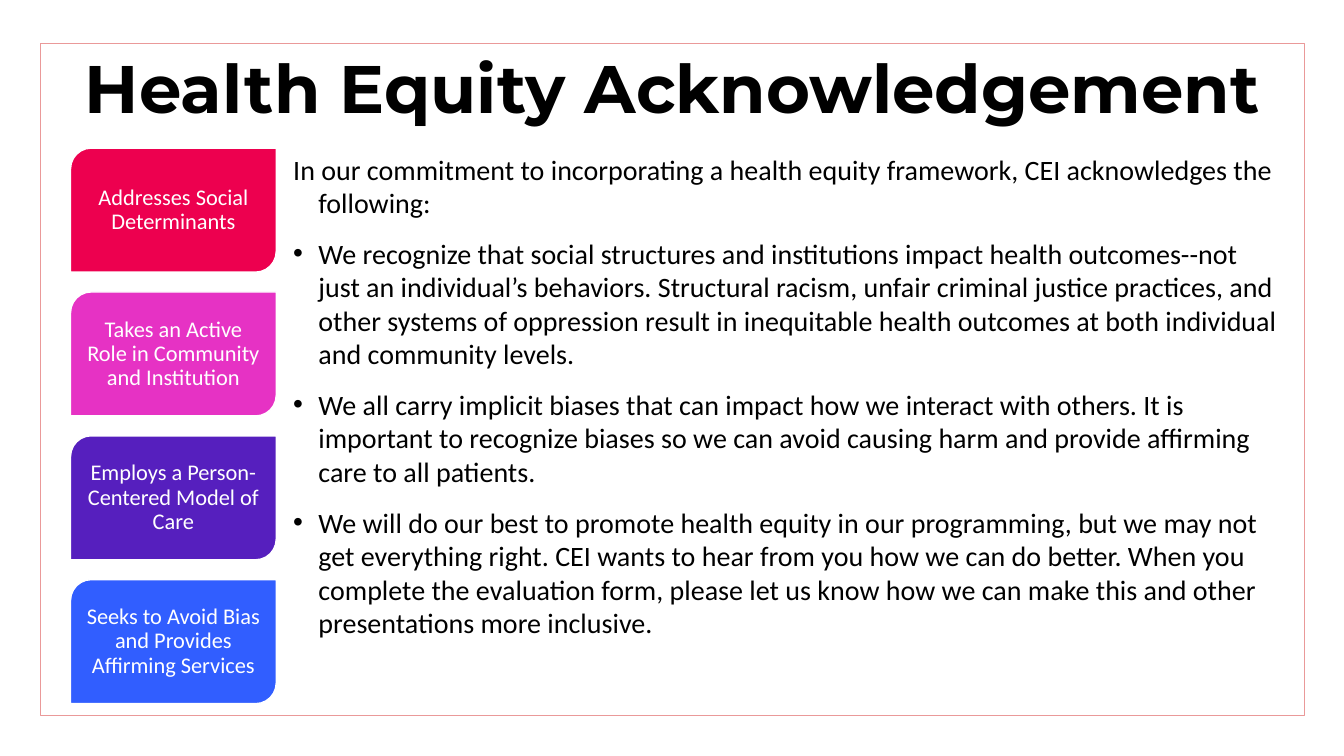
from lxml import etree
from pptx import Presentation
from pptx.dml.color import RGBColor
from pptx.enum import shapes, text
from pptx.oxml.ns import qn
from pptx.util import Inches, Pt

TITLE = "Health Equity Acknowledgement"
INTRO = ("In our commitment to incorporating a health equity framework, "
         "CEI acknowledges the following:")
COMMITMENTS = [
    "We recognize that social structures and institutions impact health outcomes--not just an "
    "individual’s behaviors. Structural racism, unfair criminal justice practices, and other "
    "systems of oppression result in inequitable health outcomes at both individual and "
    "community levels.",
    "We all carry implicit biases that can impact how we interact with others. It is important "
    "to recognize biases so we can avoid causing harm and provide affirming care to all patients.",
    "We will do our best to promote health equity in our programming, but we may not get "
    "everything right. CEI wants to hear from you how we can do better. When you complete the "
    "evaluation form, please let us know how we can make this and other presentations more "
    "inclusive.",
]
PRINCIPLES = [
    ("Addresses Social Determinants", "red"),
    ("Takes an Active Role in Community and Institution", "pink"),
    ("Employs a Person-Centered Model of Care", "purple"),
    ("Seeks to Avoid Bias and Provides Affirming Services", "blue"),
]
COLORS = {
    "frame": "EA9999", "black": "000000", "white": "FFFFFF",
    "red": "ED004F", "pink": "E632C4", "purple": "561FBE", "blue": "315EFF",
}
TITLE_FONT = {"name": "Montserrat", "size": Pt(48), "bold": True}
BODY_FONT = {"name": "Calibri", "size": Pt(20)}
CARD_FONT = {"name": "Calibri", "size": Pt(16)}
CARD_TOP, CARD_PITCH = 1.47, 1.427


def color(name):
    return RGBColor.from_string(COLORS[name])


def set_values(target, values):
    for name, value in values.items():
        setattr(target, name, value)


def set_frame(box, anchor, inset):
    frame = box.text_frame
    set_values(frame, {"word_wrap": True, "auto_size": text.MSO_AUTO_SIZE.NONE,
                       "vertical_anchor": anchor})
    for side in ("left", "right", "top", "bottom"):
        setattr(frame, f"margin_{side}", Inches(inset))
    return frame


def write(para, words, font, font_color, **layout):
    set_values(para, layout)
    span = para.add_run()
    span.text = words
    set_values(span.font, font)
    span.font.color.rgb = color(font_color)


def add_outlined(page, kind, place, line_color, line_width):
    shape = page.shapes.add_shape(kind, *map(Inches, place))
    shape.shadow.inherit = False
    shape.line.color.rgb = color(line_color)
    shape.line.width = Pt(line_width)
    return shape


def set_bullet(para, bulleted):
    """Give a hanging indent, with or without a bullet sign."""
    props = para._p.get_or_add_pPr()
    props.set("marL", str(Inches(0.25)))
    props.set("indent", str(-Inches(0.25)))
    if bulleted:
        etree.SubElement(props, qn("a:buFont")).set("typeface", "Arial")
        etree.SubElement(props, qn("a:buChar")).set("char", "•")
    else:
        etree.SubElement(props, qn("a:buNone"))


def main():
    deck = Presentation()
    deck.slide_width, deck.slide_height = Inches(13.33), Inches(7.5)
    page = deck.slides.add_slide(deck.slide_layouts[5])

    border = add_outlined(page, shapes.MSO_SHAPE.RECTANGLE,
                          (0.4, 0.43, 12.54, 6.67), "frame", 0.75)
    border.fill.background()

    title = page.shapes.title
    set_values(title, {"left": Inches(0.57), "top": Inches(0.42),
                       "width": Inches(12.2), "height": Inches(1.27)})
    frame = set_frame(title, text.MSO_ANCHOR.TOP, 0.13)
    write(frame.paragraphs[0], TITLE, TITLE_FONT, "black",
          alignment=text.PP_ALIGN.CENTER, line_spacing=0.9)

    body = page.shapes.add_textbox(*map(Inches, (2.81, 1.46, 9.99, 4.98)))
    frame = set_frame(body, text.MSO_ANCHOR.TOP, 0.1)
    frame.margin_top = frame.margin_bottom = Inches(0.05)
    for index, words in enumerate([INTRO, *COMMITMENTS]):
        para = frame.add_paragraph() if index else frame.paragraphs[0]
        set_bullet(para, bulleted=index > 0)
        write(para, words, BODY_FONT, "black", space_after=Pt(12))

    for index, (words, fill) in enumerate(PRINCIPLES):
        place = (0.7, CARD_TOP + index * CARD_PITCH, 2.04, 1.23)
        card = add_outlined(page, shapes.MSO_SHAPE.ROUND_2_DIAG_RECTANGLE, place, "white", 1)
        card.fill.solid()
        card.fill.fore_color.rgb = color(fill)
        frame = set_frame(card, text.MSO_ANCHOR.MIDDLE, 0.07)
        write(frame.paragraphs[0], words, CARD_FONT, "white",
              alignment=text.PP_ALIGN.CENTER, line_spacing=0.9)

    deck.save("out.pptx")


if __name__ == "__main__":
    main()
